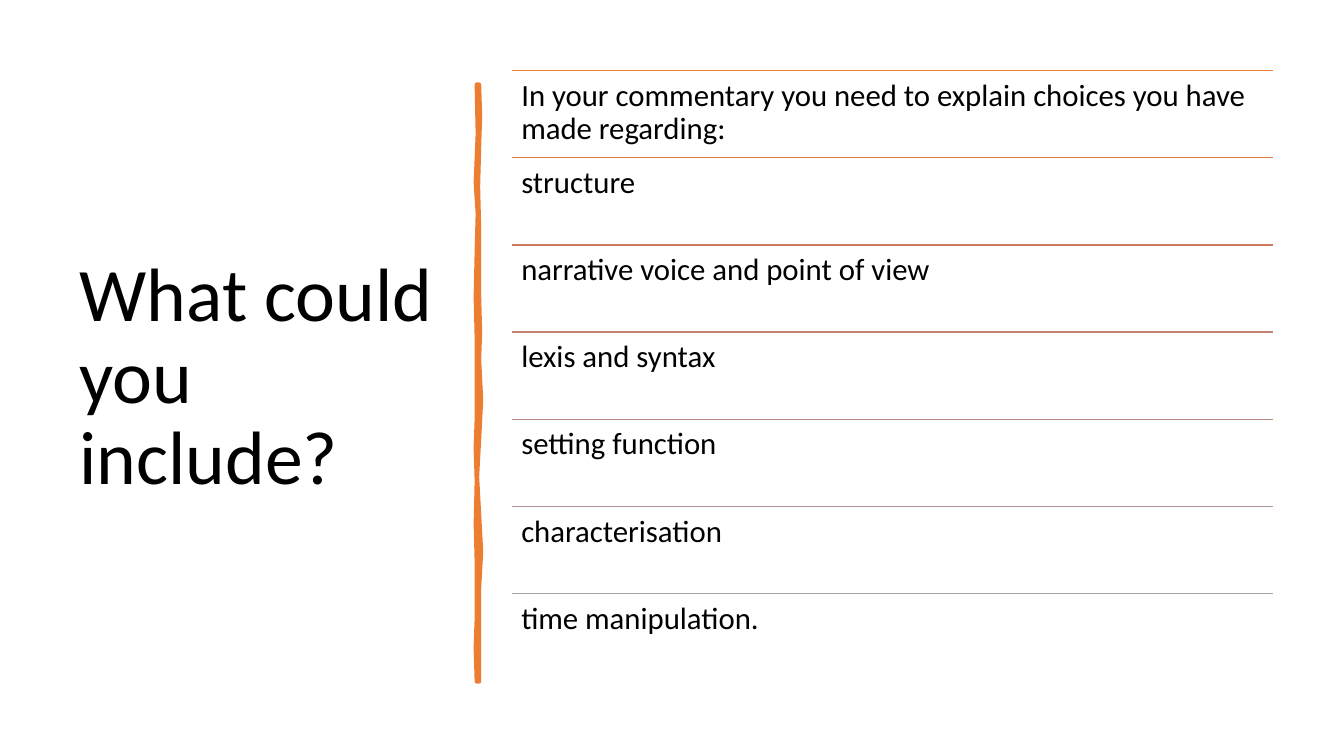
"""Build the slide that lists what a commentary could include."""
from dataclasses import dataclass

from lxml import etree
from pptx import Presentation
from pptx.dml.color import RGBColor
from pptx.enum.shapes import MSO_CONNECTOR
from pptx.enum.text import MSO_ANCHOR, MSO_AUTO_SIZE, PP_ALIGN
from pptx.oxml.ns import qn
from pptx.slide import Slide
from pptx.text.text import TextFrame
from pptx.util import Inches, Pt

STRAIGHT = MSO_CONNECTOR.STRAIGHT
MIDDLE, TOP = MSO_ANCHOR.MIDDLE, MSO_ANCHOR.TOP
LEFT = PP_ALIGN.LEFT
NO_AUTOFIT = MSO_AUTO_SIZE.NONE
TITLE_ONLY = 5


@dataclass(frozen=True)
class Theme:
    font: str = "Calibri"
    text: str = "000000"
    accent: str = "ED7D31"
    title_size: float = 54
    item_size: float = 22
    line_spacing: float = 0.9
    item_space_after: float = 7.7
    divider_width: float = 3.25
    rule_width: float = 1


@dataclass(frozen=True)
class Item:
    wording: str
    rule_colour: str


THEME = Theme()
ITEMS = (
    Item("In your commentary you need to explain choices you have made regarding:", "ED7D31"),
    Item("structure", "DE7A47"),
    Item("narrative voice and point of view", "D17B5C"),
    Item("lexis and syntax", "C48170"),
    Item("setting function", "B98A82"),
    Item("characterisation", "AE9694"),
    Item("time manipulation.", "A5A5A5"),
)
LIST_LEFT, LIST_TOP, LIST_WIDTH = 5.08, 0.7, 7.55
ROW_HEIGHT = 0.865
ITEM_INSET = 0.09

DIVIDER_RIGHT = (
    (4.75, 0.84), (4.76, 1.15), (4.75, 1.46), (4.74, 1.85), (4.75, 2.26),
    (4.75, 2.94), (4.76, 3.3), (4.75, 3.56), (4.77, 3.97), (4.75, 4.36),
    (4.73, 4.73), (4.75, 5.1), (4.77, 5.47), (4.75, 5.84), (4.75, 6.76),
)
DIVIDER_LEFT = (
    (4.73, 6.76), (4.72, 6.43), (4.73, 6.13), (4.73, 5.57), (4.72, 5.2),
    (4.73, 4.77), (4.72, 4.45), (4.73, 4.15), (4.73, 3.35), (4.72, 2.95),
    (4.73, 2.5), (4.74, 2.12), (4.72, 1.81), (4.74, 1.33), (4.73, 0.84),
)


def write_text(frame: TextFrame, wording: str, size: float, anchor: MSO_ANCHOR) -> None:
    """Fill a text frame with one left-aligned paragraph."""
    frame.word_wrap = True
    frame.auto_size = NO_AUTOFIT
    frame.vertical_anchor = anchor
    paragraph = frame.paragraphs[0]
    paragraph.alignment = LEFT
    paragraph.line_spacing = THEME.line_spacing
    run = paragraph.add_run()
    run.text = wording
    run.font.name = THEME.font
    run.font.size = Pt(size)
    run.font.color.rgb = RGBColor.from_string(THEME.text)


def add_title(slide: Slide) -> None:
    """Place the question to the left of the divider."""
    title = slide.shapes.title
    title.left, title.top = Inches(0.69), Inches(0.7)
    title.width, title.height = Inches(3.74), Inches(6.11)
    write_text(title.text_frame, "What could you include?", THEME.title_size, MIDDLE)


def add_divider(slide: Slide) -> None:
    """Draw the uneven upright stroke between question and list."""
    start, *others = [(Inches(x), Inches(y)) for x, y in DIVIDER_RIGHT + DIVIDER_LEFT]
    builder = slide.shapes.build_freeform(*start)
    builder.add_line_segments(others, close=True)
    divider = builder.convert_to_shape()
    divider.shadow.inherit = False
    accent = RGBColor.from_string(THEME.accent)
    divider.fill.solid()
    divider.fill.fore_color.rgb = accent
    divider.line.color.rgb = accent
    divider.line.width = Pt(THEME.divider_width)
    outline = divider.line._get_or_add_ln()
    etree.SubElement(outline, qn("a:round"))


def add_item(slide: Slide, item: Item, top: float) -> None:
    """Draw one list row: a rule with its wording below."""
    rule = slide.shapes.add_connector(
        STRAIGHT, Inches(LIST_LEFT), Inches(top), Inches(LIST_LEFT + LIST_WIDTH), Inches(top)
    )
    rule.line.color.rgb = RGBColor.from_string(item.rule_colour)
    rule.line.width = Pt(THEME.rule_width)
    etree.SubElement(rule._element.spPr, qn("a:effectLst"))

    label = slide.shapes.add_textbox(
        Inches(LIST_LEFT), Inches(top), Inches(LIST_WIDTH), Inches(ROW_HEIGHT)
    )
    frame = label.text_frame
    frame.margin_left = frame.margin_right = Inches(ITEM_INSET)
    frame.margin_top = frame.margin_bottom = Inches(ITEM_INSET)
    write_text(frame, item.wording, THEME.item_size, TOP)
    frame.paragraphs[0].space_after = Pt(THEME.item_space_after)


def main() -> None:
    """Assemble and save the slide."""
    presentation = Presentation()
    presentation.slide_width = Inches(13.33)
    presentation.slide_height = Inches(7.5)
    slide = presentation.slides.add_slide(presentation.slide_layouts[TITLE_ONLY])
    add_title(slide)
    add_divider(slide)
    for row, item in enumerate(ITEMS):
        add_item(slide, item, LIST_TOP + row * ROW_HEIGHT)
    presentation.save("out.pptx")


if __name__ == "__main__":
    main()
